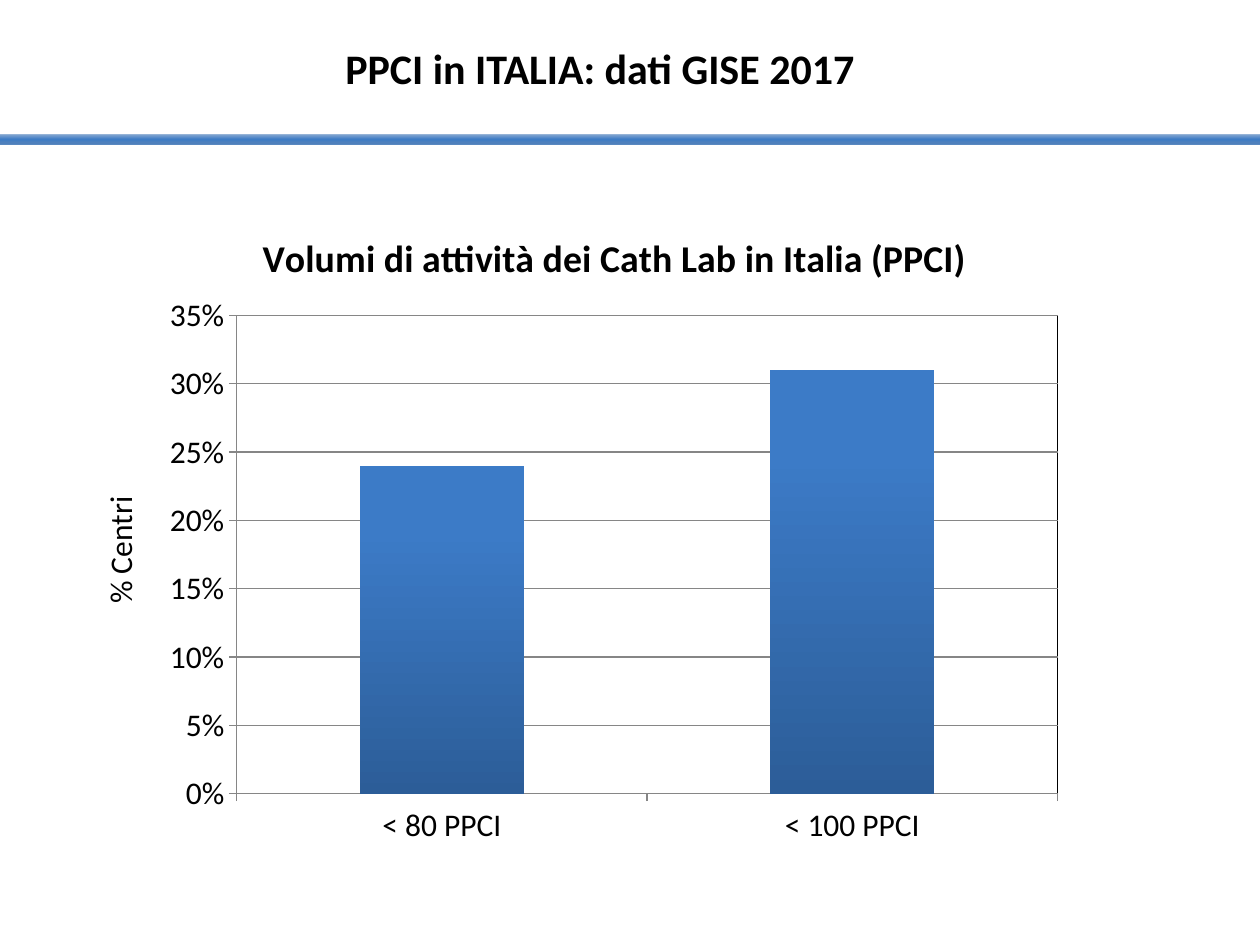
import pptx
import pptx.chart.data
import pptx.dml.color
import pptx.enum.chart
import pptx.enum.shapes
import pptx.enum.text
import pptx.oxml
import pptx.oxml.ns
import pptx.util
from pptx.util import Inches

RGBColor = pptx.dml.color.RGBColor
BLACK = RGBColor(0x00, 0x00, 0x00)
GREY = RGBColor(0x86, 0x86, 0x86)
BAND_BLUE = RGBColor(0x4F, 0x81, 0xBD)
BAND_CORE = RGBColor(0x3D, 0x7C, 0xC7)
BAR_DARK = RGBColor(0x2C, 0x5D, 0x98)
BAR_LIGHT = RGBColor(0x3C, 0x7B, 0xC7)

FONT = "Calibri"
BODY = {"name": FONT, "size": pptx.util.Pt(18), "bold": False}
HEADING = {"name": FONT, "size": pptx.util.Pt(24), "bold": True}
CHART_HEADING = {"name": FONT, "size": pptx.util.Pt(21.6), "bold": True}


def set_font(font, values):
    for name, value in values.items():
        setattr(font, name, value)
    font.color.rgb = BLACK


def place(shape, box):
    for name, value in zip(("left", "top", "width", "height"), box):
        setattr(shape, name, Inches(value))


def fill_text(shape, text, values, wrap):
    frame = shape.text_frame
    frame.text = text
    frame.word_wrap = wrap
    frame.auto_size = pptx.enum.text.MSO_AUTO_SIZE.SHAPE_TO_FIT_TEXT
    frame.vertical_anchor = pptx.enum.text.MSO_ANCHOR.TOP
    para = frame.paragraphs[0]
    para.alignment = pptx.enum.text.PP_ALIGN.LEFT
    set_font(para.runs[0].font, values)


def add_title(page, box):
    title = page.shapes.title
    place(title, box)
    fill_text(title, "PPCI in ITALIA: dati GISE 2017", HEADING, True)


def add_band(page, box):
    """Draw the full-width rule, which fades towards its top edge."""
    band = page.shapes.add_shape(
        pptx.enum.shapes.MSO_SHAPE.RECTANGLE, *map(Inches, box))
    band.shadow.inherit = False
    band.line.fill.background()
    band.fill.gradient()
    band.fill.gradient_angle = 90
    stops = band._element.spPr.find(".//" + pptx.oxml.ns.qn("a:gsLst"))
    for stop in list(stops):
        stops.remove(stop)
    for position, color, alpha in (
            (24, BAND_BLUE, 100), (53, BAND_CORE, 100), (100, BAND_BLUE, 66)):
        stops.append(pptx.oxml.parse_xml(
            f'<a:gs {pptx.oxml.ns.nsdecls("a")} pos="{position * 1000}">'
            f'<a:srgbClr val="{color}"><a:alpha val="{alpha * 1000}"/>'
            '</a:srgbClr></a:gs>'))


def frame_plot(chart, x, y, w, h):
    """Fix the inner plot area, in fractions of the chart, and outline it."""
    declarations = pptx.oxml.ns.nsdecls("c", "a")
    plot_area = chart._chartSpace.chart.plotArea
    for layout in plot_area.findall(pptx.oxml.ns.qn("c:layout")):
        plot_area.remove(layout)
    sizes = "".join(f'<c:{name} val="{value}"/>' for name, value in
                    (("x", x), ("y", y), ("w", w), ("h", h)))
    plot_area.insert(0, pptx.oxml.parse_xml(
        f'<c:layout {declarations}><c:manualLayout>'
        '<c:layoutTarget val="inner"/><c:xMode val="edge"/>'
        f'<c:yMode val="edge"/>{sizes}</c:manualLayout></c:layout>'))
    plot_area.append(pptx.oxml.parse_xml(
        f'<c:spPr {declarations}><a:noFill/><a:ln w="9525"><a:solidFill>'
        f'<a:srgbClr val="{BLACK}"/></a:solidFill></a:ln></c:spPr>'))


def add_volume_chart(page, box):
    data = pptx.chart.data.CategoryChartData(number_format="0%")
    data.categories = ["< 80 PPCI", "< 100 PPCI"]
    data.add_series("Series 1", [0.24, 0.31])
    chart = page.shapes.add_chart(
        pptx.enum.chart.XL_CHART_TYPE.COLUMN_CLUSTERED,
        *map(Inches, box), data).chart
    set_font(chart.font, BODY)
    chart.has_legend = False

    heading = chart.chart_title.text_frame
    heading.text = "Volumi di attività dei Cath Lab in Italia (PPCI)"
    set_font(heading.paragraphs[0].runs[0].font, CHART_HEADING)
    chart.chart_title.include_in_layout = False

    plot = chart.plots[0]
    plot.gap_width = 150
    plot.vary_by_categories = False
    fill = plot.series[0].format.fill
    fill.gradient()
    fill.gradient_angle = 90
    for stop, position, color in zip(
            fill.gradient_stops, (0, 0.8), (BAR_DARK, BAR_LIGHT)):
        stop.position = position
        stop.color.rgb = color

    values = chart.value_axis
    values.minimum_scale, values.maximum_scale, values.major_unit = 0, 0.35, 0.05
    values.has_major_gridlines = True
    values.tick_labels.number_format = "0%"
    values.tick_labels.number_format_is_linked = False
    for axis in (values, chart.category_axis):
        axis.major_tick_mark = pptx.enum.chart.XL_TICK_MARK.OUTSIDE
    for part in (values, chart.category_axis, values.major_gridlines):
        part.format.line.color.rgb = GREY
        part.format.line.width = pptx.util.Pt(0.75)
    frame_plot(chart, 0.09, 0.17, 0.89, 0.73)


def add_axis_caption(page, box):
    caption = page.shapes.add_textbox(*map(Inches, box))
    caption.rotation = 270
    fill_text(caption, "% Centri", BODY, False)


def main():
    deck = pptx.Presentation()
    deck.slide_width, deck.slide_height = Inches(10), Inches(7.5)
    page = deck.slides.add_slide(deck.slide_layouts.get_by_name("Title Only"))
    add_title(page, (2.64, 0.29, 5.67, 0.5))
    add_volume_chart(page, (1.22, 1.62, 7.32, 5.2))
    add_band(page, (0, 1.07, 10, 0.08))
    add_axis_caption(page, (0.42, 4.16, 1.06, 0.4))
    deck.save("out.pptx")


if __name__ == "__main__":
    main()
